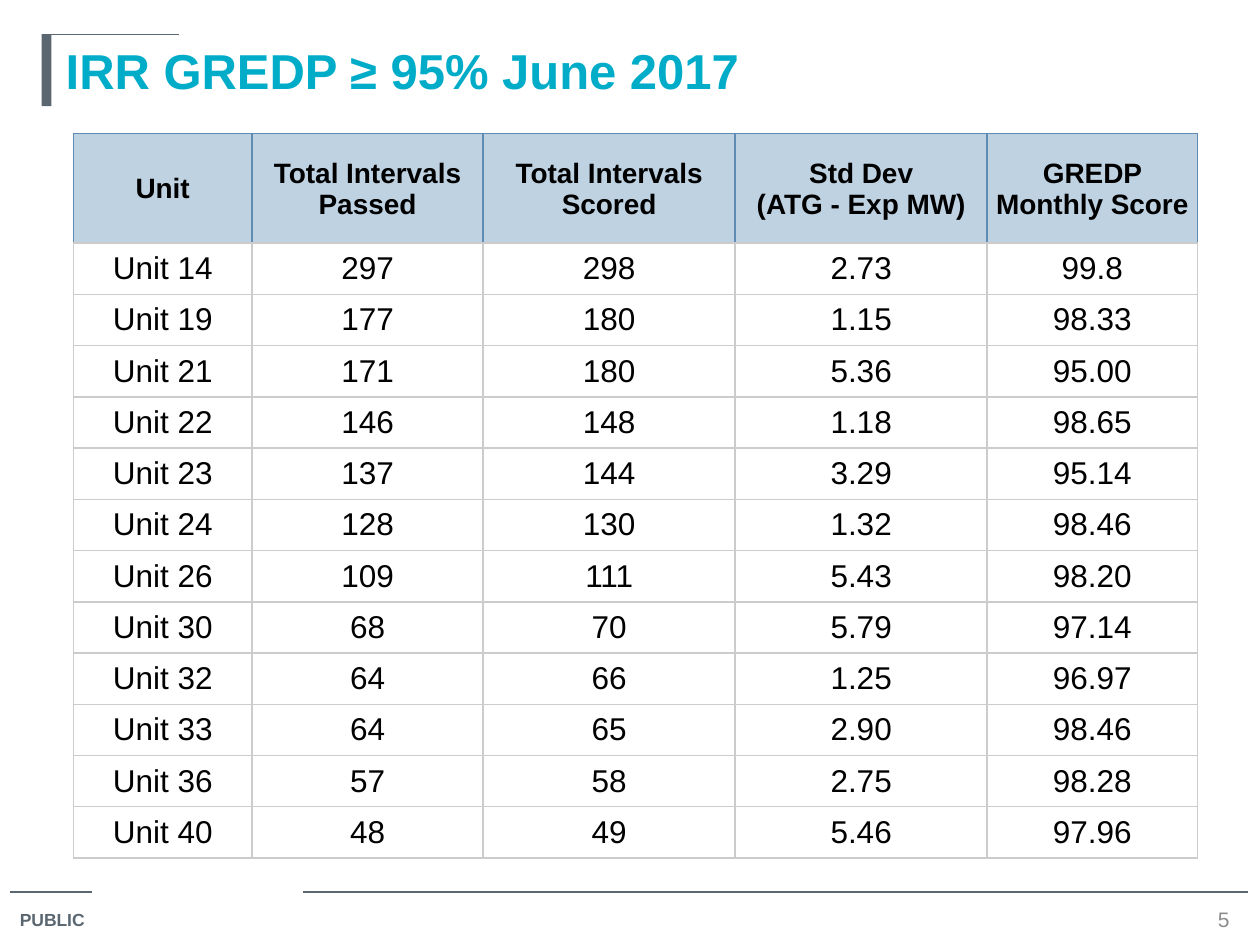
from dataclasses import dataclass

from lxml import etree
from pptx import Presentation
from pptx import util as u
from pptx.dml.color import RGBColor
from pptx.enum import shapes, text
from pptx.oxml import ns
from pptx.util import Cm


@dataclass(frozen=True)
class Theme:
    font: str = "Arial"
    slate: str = "5B6770"
    teal: str = "00ACC8"
    gray: str = "8C8C8C"
    black: str = "000000"
    header_fill: str = "BFD2E2"
    header_border: str = "608BB4"
    body_border: str = "CCCCCC"
    title_size: int = 28
    body_size: int = 18
    header_size: int = 16
    number_size: int = 12
    label_size: int = 10


THEME = Theme()
COLUMN_WIDTHS = (3.6, 4.66, 5.08, 5.08, 4.24)
HEADERS = (
    "Unit",
    "Total Intervals Passed",
    "Total Intervals Scored",
    "Std Dev\n(ATG - Exp MW)",
    "GREDP Monthly Score",
)
SCORES = (
    ("Unit 14", "297", "298", "2.73", "99.8"),
    ("Unit 19", "177", "180", "1.15", "98.33"),
    ("Unit 21", "171", "180", "5.36", "95.00"),
    ("Unit 22", "146", "148", "1.18", "98.65"),
    ("Unit 23", "137", "144", "3.29", "95.14"),
    ("Unit 24", "128", "130", "1.32", "98.46"),
    ("Unit 26", "109", "111", "5.43", "98.20"),
    ("Unit 30", "68", "70", "5.79", "97.14"),
    ("Unit 32", "64", "66", "1.25", "96.97"),
    ("Unit 33", "64", "65", "2.90", "98.46"),
    ("Unit 36", "57", "58", "2.75", "98.28"),
    ("Unit 40", "48", "49", "5.46", "97.96"),
)


def write(frame, words, size, color, bold=False, align=text.PP_ALIGN.LEFT):
    frame.text = words
    for para in frame.paragraphs:
        para.alignment = align
        para.font.name = THEME.font
        para.font.size = u.Pt(size)
        para.font.bold = bold
        para.font.color.rgb = RGBColor.from_string(color)


def add_rule(page, left, right, top):
    rule = page.shapes.add_connector(
        shapes.MSO_CONNECTOR.STRAIGHT, Cm(left), Cm(top), Cm(right), Cm(top))
    rule.line.color.rgb = RGBColor.from_string(THEME.slate)
    rule.line.width = u.Pt(0.75)
    etree.SubElement(rule._element.spPr, ns.qn("a:effectLst"))


def add_title_bar(page):
    bar = page.shapes.add_shape(
        shapes.MSO_SHAPE.RECTANGLE, Cm(0.84), Cm(0.69), Cm(0.2), Cm(1.45))
    bar.shadow.inherit = False
    bar.fill.solid()
    bar.fill.fore_color.rgb = RGBColor.from_string(THEME.slate)
    bar.line.fill.background()


def set_title(page, words):
    title = page.shapes.title
    title.left, title.top, title.width, title.height = (
        Cm(1.07), Cm(0.69), Cm(23.5), Cm(1.98))
    frame = title.text_frame
    frame.auto_size = text.MSO_AUTO_SIZE.NONE
    frame.vertical_anchor = text.MSO_ANCHOR.TOP
    write(frame, words, THEME.title_size, THEME.teal, bold=True)


def add_footer(page):
    add_rule(page, 0.2, 1.85, 17.98)
    add_rule(page, 6.1, 25.15, 17.98)

    label = page.shapes.add_textbox(Cm(0.15), Cm(18.21), Cm(1.96), Cm(0.71))
    label.text_frame.word_wrap = False
    write(label.text_frame, "PUBLIC", THEME.label_size, THEME.slate, bold=True)

    number = page.shapes.add_textbox(Cm(24.35), Cm(18.24), Cm(0.64), Cm(0.58))
    frame = number.text_frame
    frame.word_wrap = True
    frame.vertical_anchor = text.MSO_ANCHOR.MIDDLE
    frame.margin_left = frame.margin_right = 0
    frame.margin_top = frame.margin_bottom = 0
    write(frame, "5", THEME.number_size, THEME.gray, align=text.PP_ALIGN.CENTER)


def set_borders(cell, side_color, bottom_color):
    properties = cell._tc.get_or_add_tcPr()
    for side in "LRTB":
        line = etree.SubElement(
            properties, ns.qn(f"a:ln{side}"), w=str(u.Pt(1)))
        fill = etree.SubElement(line, ns.qn("a:solidFill"))
        color = bottom_color if side == "B" else side_color
        etree.SubElement(fill, ns.qn("a:srgbClr"), val=color)


def format_cell(cell, words, is_header):
    margin = Cm(0.03) if is_header else 0
    cell.margin_left = cell.margin_right = cell.margin_top = margin
    cell.margin_bottom = 0
    cell.vertical_anchor = text.MSO_ANCHOR.MIDDLE
    set_borders(cell, THEME.header_border if is_header else THEME.body_border,
                THEME.body_border)
    if is_header:
        cell.fill.solid()
        cell.fill.fore_color.rgb = RGBColor.from_string(THEME.header_fill)
    else:
        cell.fill.background()
    size = THEME.header_size if is_header else THEME.body_size
    write(cell.text_frame, words, size, THEME.black, bold=is_header,
          align=text.PP_ALIGN.CENTER)


def add_score_table(page):
    header_height, body_height = Cm(2.21), Cm(12.4)
    rows = (HEADERS, *SCORES)
    table = page.shapes.add_table(
        len(rows), len(HEADERS), Cm(1.48), Cm(2.69),
        Cm(sum(COLUMN_WIDTHS)), header_height + body_height).table
    table.horz_banding = False
    for column, width in zip(table.columns, COLUMN_WIDTHS):
        column.width = Cm(width)
    for index, values in enumerate(rows):
        is_header = index == 0
        table.rows[index].height = (
            header_height if is_header else body_height // len(SCORES))
        for column, words in enumerate(values):
            format_cell(table.cell(index, column), words, is_header)


def main():
    deck = Presentation()
    deck.slide_width, deck.slide_height = Cm(25.4), Cm(19.05)
    page = deck.slides.add_slide(deck.slide_layouts.get_by_name("Title Only"))
    add_title_bar(page)
    add_rule(page, 0.84, 3.6, 0.69)
    set_title(page, "IRR GREDP ≥ 95% June 2017")
    add_score_table(page)
    add_footer(page)
    deck.save("out.pptx")


if __name__ == "__main__":
    main()
